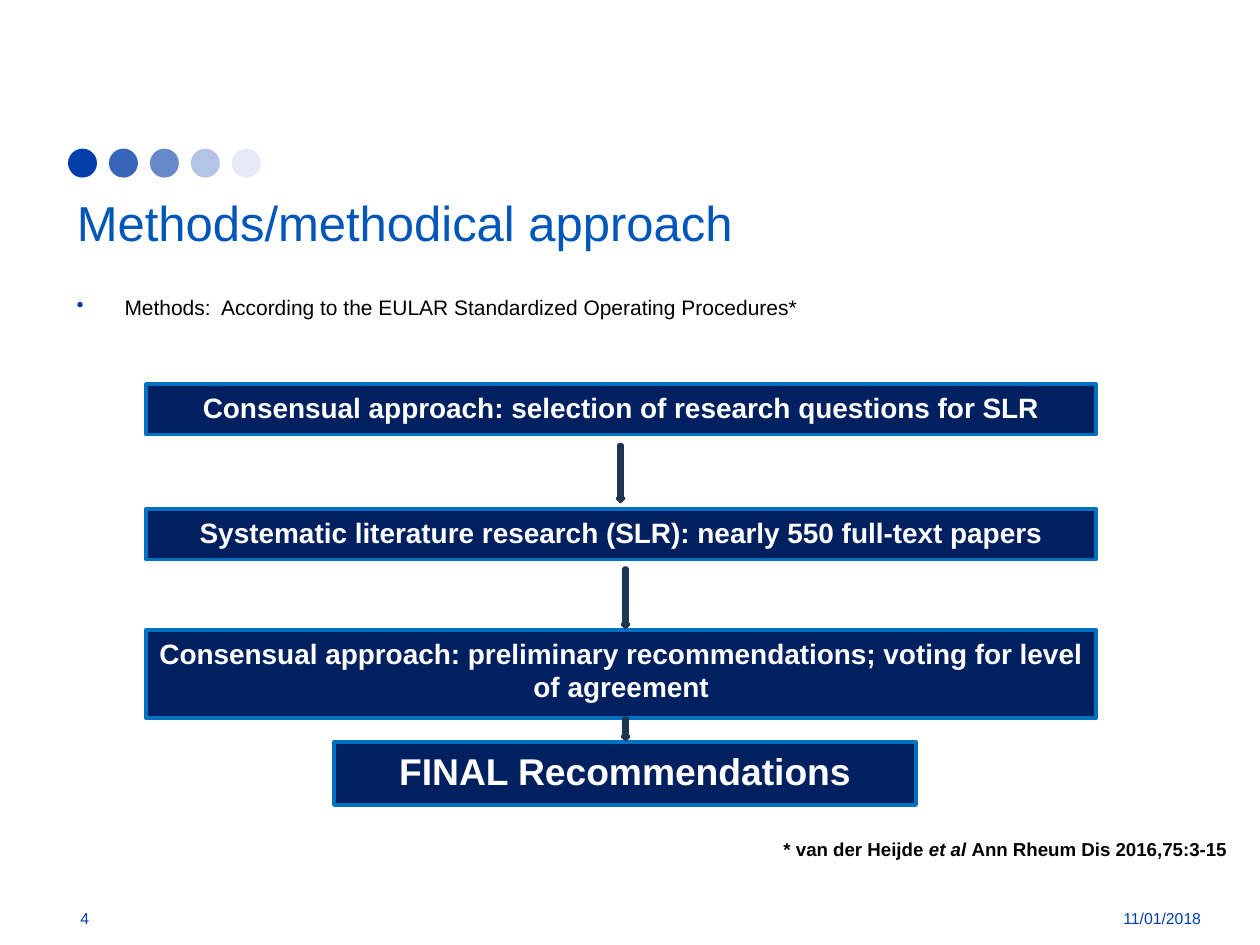
import pptx
import pptx.util
import pptx.dml.color
import pptx.enum.shapes
import pptx.enum.text
import pptx.oxml
import pptx.oxml.ns
from lxml import etree

Inches, Pt = pptx.util.Inches, pptx.util.Pt
SHAPE = pptx.enum.shapes.MSO_SHAPE
ALIGN = pptx.enum.text.PP_ALIGN
ANCHOR = pptx.enum.text.MSO_ANCHOR
rgb = pptx.dml.color.RGBColor.from_string


def add_shape(kind, left, top, width, height, fill, line=None):
    shape = page.shapes.add_shape(kind, Inches(left), Inches(top), Inches(width), Inches(height))
    shape.shadow.inherit = False
    shape.fill.solid()
    shape.fill.fore_color.rgb = rgb(fill)
    if line:
        shape.line.color.rgb = rgb(line)
        shape.line.width = Pt(2)
    else:
        shape.line.fill.background()
    return shape


def write(frame, text, size, color, bold=False, align=ALIGN.LEFT, anchor=ANCHOR.TOP):
    """Fill the first paragraph of a text frame; text may be a list of runs."""
    frame.word_wrap = True
    frame.vertical_anchor = anchor
    para = frame.paragraphs[0]
    para.alignment = align
    for part in [text] if isinstance(text, str) else text:
        para.add_run().text = part
    para.font.name = "Arial"
    para.font.size = Pt(size)
    para.font.bold = bold
    para.font.color.rgb = rgb(color)
    return para


deck = pptx.Presentation()
deck.slide_width, deck.slide_height = Inches(10), Inches(7.5)
page = deck.slides.add_slide(deck.slide_layouts[5])

# Row of fading dots
for index, opacity in enumerate([100, 80, 61, 30, 10]):
    dot = add_shape(SHAPE.OVAL, 0.54 + 0.325 * index, 1.18, 0.23, 0.23, "063FA9")
    color = dot.fill._xPr.find(".//" + pptx.oxml.ns.qn("a:srgbClr"))
    etree.SubElement(color, pptx.oxml.ns.qn("a:alpha"), val=str(opacity * 1000))

title = page.shapes.title
title.left, title.top = Inches(0.51), Inches(1.42)
title.width, title.height = Inches(9.11), Inches(0.69)
write(title.text_frame, "Methods/methodical approach", 28, "0056B9", anchor=ANCHOR.MIDDLE)

# Bulleted line
body = page.shapes.add_textbox(Inches(0.51), Inches(2.29), Inches(9.11), Inches(0.4))
bullet = body.text_frame.paragraphs[0]._p.get_or_add_pPr()
bullet.set("marL", str(Inches(0.38)))
bullet.set("indent", str(Inches(-0.38)))
bullet_color = etree.SubElement(bullet, pptx.oxml.ns.qn("a:buClr"))
etree.SubElement(bullet_color, pptx.oxml.ns.qn("a:srgbClr"), val="003FA8")
etree.SubElement(bullet, pptx.oxml.ns.qn("a:buChar"), char="•")
write(body.text_frame, "Methods:  According to the EULAR Standardized Operating Procedures*", 12, "000000")

# Flow of steps
steps = [
    (1.16, 3.05, 7.54, 0.4, 16, "Consensual approach: selection of research questions for SLR"),
    (1.16, 4.04, 7.54, 0.4, 16, "Systematic literature research (SLR): nearly 550 full-text papers"),
    (1.16, 5, 7.54, 0.7, 16,
     "Consensual approach: preliminary recommendations; voting for level of agreement"),
    (2.65, 5.89, 4.62, 0.5, 21.3, "FINAL Recommendations"),
]
for left, top, width, height, size, text in steps:
    step = add_shape(SHAPE.RECTANGLE, left, top, width, height, "002060", "0070C0")
    write(step.text_frame, text, size, "FFFFFF", bold=True, align=ALIGN.CENTER)

for left, top, height in [(4.9, 3.53, 0.45), (4.94, 4.51, 0.47), (4.94, 5.7, 0.17)]:
    add_shape(SHAPE.DOWN_ARROW, left, top, 0.05, height, "28476D", "1E3551")

# Reference and footer
reference = page.shapes.add_textbox(Inches(6.12), Inches(6.6), Inches(3.76), Inches(0.28))
citation = write(reference.text_frame,
                 ["* van der Heijde ", "et al ", "Ann Rheum Dis 2016,75:3-15"], 10.7, "000000", bold=True)
citation.runs[1].font.italic = True
reference.text_frame.word_wrap = False

for left, width, text, align in [(0.54, 0.96, "4", ALIGN.LEFT), (8.29, 1.34, "11/01/2018", ALIGN.RIGHT)]:
    footer = page.shapes.add_textbox(Inches(left), Inches(7.09), Inches(width), Inches(0.4))
    write(footer.text_frame, text, 9, "003FA8", align=align, anchor=ANCHOR.MIDDLE)

deck.save("out.pptx")
